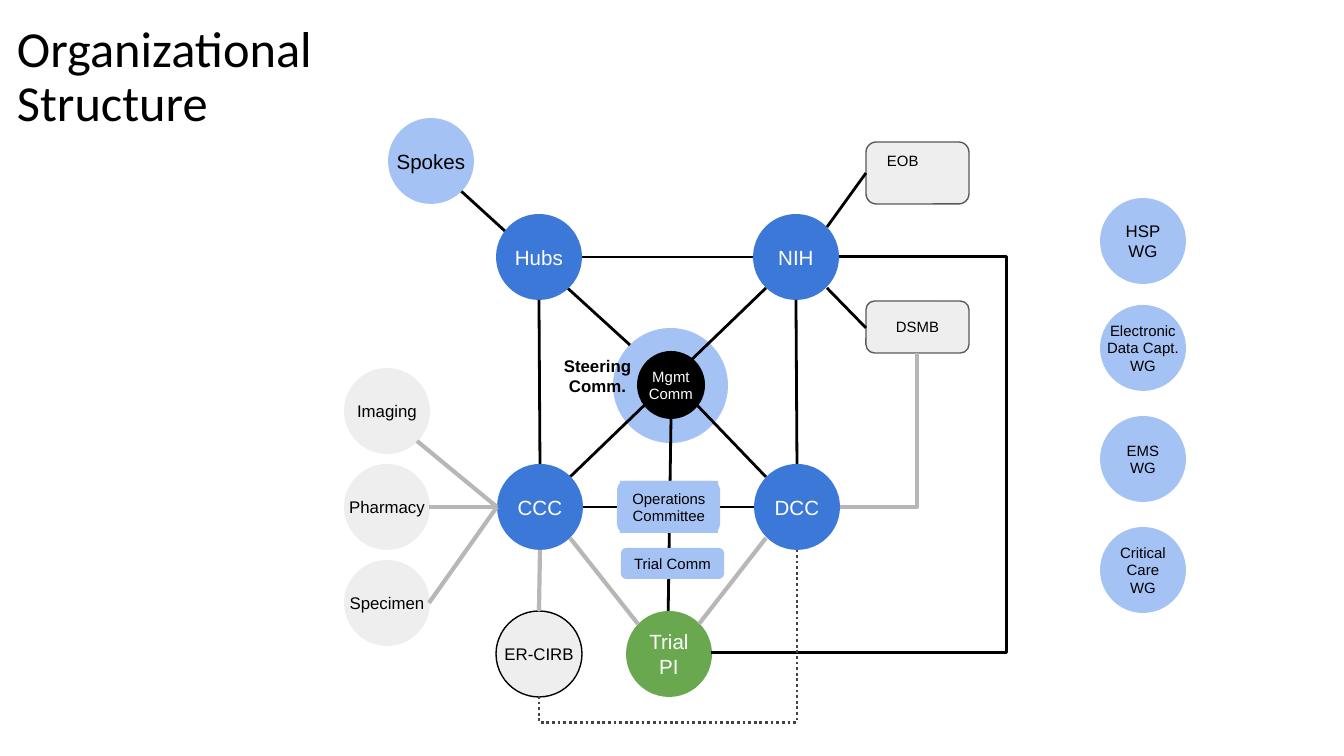
from dataclasses import dataclass

from lxml import etree
from pptx import Presentation
from pptx import util as u
from pptx.dml.color import RGBColor
from pptx.enum import dml, shapes, text
from pptx.oxml import ns

SHAPE = shapes.MSO_SHAPE
LINK = shapes.MSO_CONNECTOR


@dataclass(frozen=True)
class Theme:
    """Colours, fonts and type sizes."""
    black: str = "000000"
    white: str = "FFFFFF"
    blue: str = "3C78D8"
    sky: str = "A4C2F4"
    green: str = "6AA84F"
    pale: str = "EEEEEE"
    grey: str = "B7B7B7"
    edge: str = "595959"
    dark: str = "434343"
    head: str = "Calibri"
    body: str = "Arial"
    title: int = 27
    large: int = 11
    mid: int = 9
    small: int = 8


class Chart:
    """Draws the parts of an organization chart on one slide."""

    def __init__(self, theme, wide, high):
        """Opens a deck with one titled slide."""
        self.theme = theme
        self.deck = Presentation()
        self.deck.slide_width, self.deck.slide_height = self.px(wide), self.px(high)
        self.slide = self.deck.slides.add_slide(self.deck.slide_layouts[5])

    def px(self, n):
        """Turns px into EMU."""
        return u.Emu(round(n * 9144000 / 1344))

    def letter(self, frame, words, size, color, pad, bold=False,
               align=text.PP_ALIGN.CENTER, font=None, lead=1.0):
        """Fills a text frame, one paragraph per line of words."""
        frame.word_wrap = True
        frame.auto_size = text.MSO_AUTO_SIZE.NONE
        frame.vertical_anchor = text.MSO_ANCHOR.MIDDLE
        frame.margin_left = frame.margin_right = self.px(pad)
        frame.margin_top = frame.margin_bottom = self.px(pad)
        for i, line in enumerate(words.split("\n")):
            para = frame.add_paragraph() if i else frame.paragraphs[0]
            para.alignment, para.line_spacing = align, lead
            run = para.add_run()
            run.text = line
            run.font.size, run.font.bold = u.Pt(size), bold
            run.font.name = font or self.theme.body
            run.font.color.rgb = RGBColor.from_string(color)

    def title(self, words, *area):
        """Places the slide title."""
        head = self.slide.shapes.title
        head.left, head.top, head.width, head.height = map(self.px, area)
        self.letter(head.text_frame, words, self.theme.title, self.theme.black, 9,
                    align=text.PP_ALIGN.LEFT, font=self.theme.head, lead=0.9)

    def label(self, words, area, size, color=Theme.black, **style):
        """Adds free text."""
        box = self.slide.shapes.add_textbox(*map(self.px, area))
        self.letter(box.text_frame, words, size, color, 9, **style)

    def box(self, area, fill, words="", edge=None, kind=SHAPE.ROUNDED_RECTANGLE):
        """Adds a filled shape with optional words and edge."""
        item = self.slide.shapes.add_shape(kind, *map(self.px, area))
        item.shadow.inherit = False
        item.fill.solid()
        item.fill.fore_color.rgb = RGBColor.from_string(fill)
        if edge:
            item.line.color.rgb = RGBColor.from_string(edge)
            item.line.width = u.Pt(0.75)
        else:
            item.line.fill.background()
        if words:
            self.letter(item.text_frame, words, self.theme.small, self.theme.black, 4)

    def disc(self, x, y, fill, words="", size=0, color=Theme.black, edge=None, span=86):
        """Adds a round node with its label centred on it."""
        self.box((x, y, span, span), fill, edge=edge, kind=SHAPE.FLOWCHART_CONNECTOR)
        if words:
            mid = span / 2
            self.label(words, (x + mid - 49, y + mid - 26, 98, 52), size, color)

    def line(self, ends, color=Theme.black, width=1.5, kind=LINK.STRAIGHT):
        """Adds a line between two points."""
        link = self.slide.shapes.add_connector(kind, *map(self.px, ends))
        link.line.color.rgb = RGBColor.from_string(color)
        link.line.width = u.Pt(width)
        etree.SubElement(link._element.spPr, ns.qn("a:effectLst"))
        return link

    def elbow(self, ends, shape, bend=None, **style):
        """Adds a bent line, with its bend as a share of its width."""
        link = self.line(ends, kind=LINK.ELBOW, **style)
        geom = link._element.spPr.find(ns.qn("a:prstGeom"))
        geom.set("prst", shape)
        if bend is not None:
            guide = etree.SubElement(geom.find(ns.qn("a:avLst")), ns.qn("a:gd"))
            guide.set("name", "adj1")
            guide.set("fmla", f"val {round(bend * 100000)}")
        return link

    def under(self, ends, bend, color):
        """Adds a dotted line that leaves downward and rises to its end."""
        x1, y1, x2, y2 = ends
        x, y = (x1 + x2) / 2, (y1 + y2) / 2
        w, h = (y1 - y2) / 2, (x2 - x1) / 2
        link = self.elbow((x - w, y - h, x + w, y + h), "bentConnector3", bend,
                          color=color)
        link._element.spPr.find(ns.qn("a:xfrm")).set("rot", "16200000")
        link.line.dash_style = dml.MSO_LINE.ROUND_DOT


def main():
    """Builds the slide."""
    t = Theme()
    c = Chart(t, 1344, 756)

    c.line((583, 507, 754, 507))
    c.disc(613, 328, t.sky, span=115)
    for ends in ((671, 419, 668, 626), (461, 191, 630, 345), (766, 288, 570, 477)):
        c.line(ends)
    c.title("Organizational Structure", 8, 5, 329, 146)

    for i, name in enumerate(("Imaging", "Pharmacy", "Specimen")):
        c.disc(344, 368 + 96 * i, t.pale, name, t.mid)
    c.disc(388, 118, t.sky, "Spokes", t.large)
    for x, y, name in ((496, 214, "Hubs"), (497, 464, "CCC"),
                       (753, 214, "NIH"), (754, 464, "DCC")):
        c.disc(x, y, t.blue, name, t.large, t.white)
    c.disc(637, 351, t.black, "Mgmt\nComm", t.small, t.white, span=68)
    c.label("Steering\nComm.", (531, 341, 133, 70), t.mid, bold=True)
    c.disc(626, 611, t.green, "Trial\nPI", t.large, t.white)
    for y, name, size in ((198, "HSP\nWG", t.mid),
                          (305, "Electronic Data Capt. WG", t.small),
                          (416, "EMS\nWG", t.small),
                          (527, "Critical\nCare\nWG", t.small)):
        c.disc(1100, y, t.sky, name, size)

    c.box((866, 301, 103, 52), t.pale, "DSMB", t.edge)
    c.box((621, 548, 103, 31), t.sky, "Trial Comm")
    c.box((617, 481, 103, 52), t.sky)
    c.box((620, 481, 98, 52), t.sky, "Operations\nCommittee", kind=SHAPE.RECTANGLE)
    c.box((866, 142, 103, 62), t.pale, edge=t.edge)
    c.label("EOB", (878, 118, 79, 86), t.small, align=text.PP_ALIGN.LEFT)

    for ends in ((766, 477, 695, 403), (539, 300, 540, 464), (797, 464, 796, 300),
                 (582, 257, 753, 257), (866, 173, 827, 227), (866, 328, 827, 288)):
        c.line(ends)
    c.elbow((711, 653, 839, 257), "bentConnector3", 2.31)
    for ends in ((766, 538, 699, 624), (570, 538, 638, 624), (417, 441, 497, 507),
                 (497, 507, 429, 507), (497, 507, 429, 603)):
        c.line(ends, t.grey, 2.25)
    c.elbow((840, 507, 917, 353), "bentConnector2", color=t.grey, width=2.25)
    c.disc(496, 611, t.pale, "ER-CIRB", t.mid, edge=t.black)
    c.line((540, 550, 539, 611), t.grey, 2.25)
    c.under((539, 696, 797, 550), -0.18, t.dark)

    c.deck.save("out.pptx")


if __name__ == "__main__":
    main()
